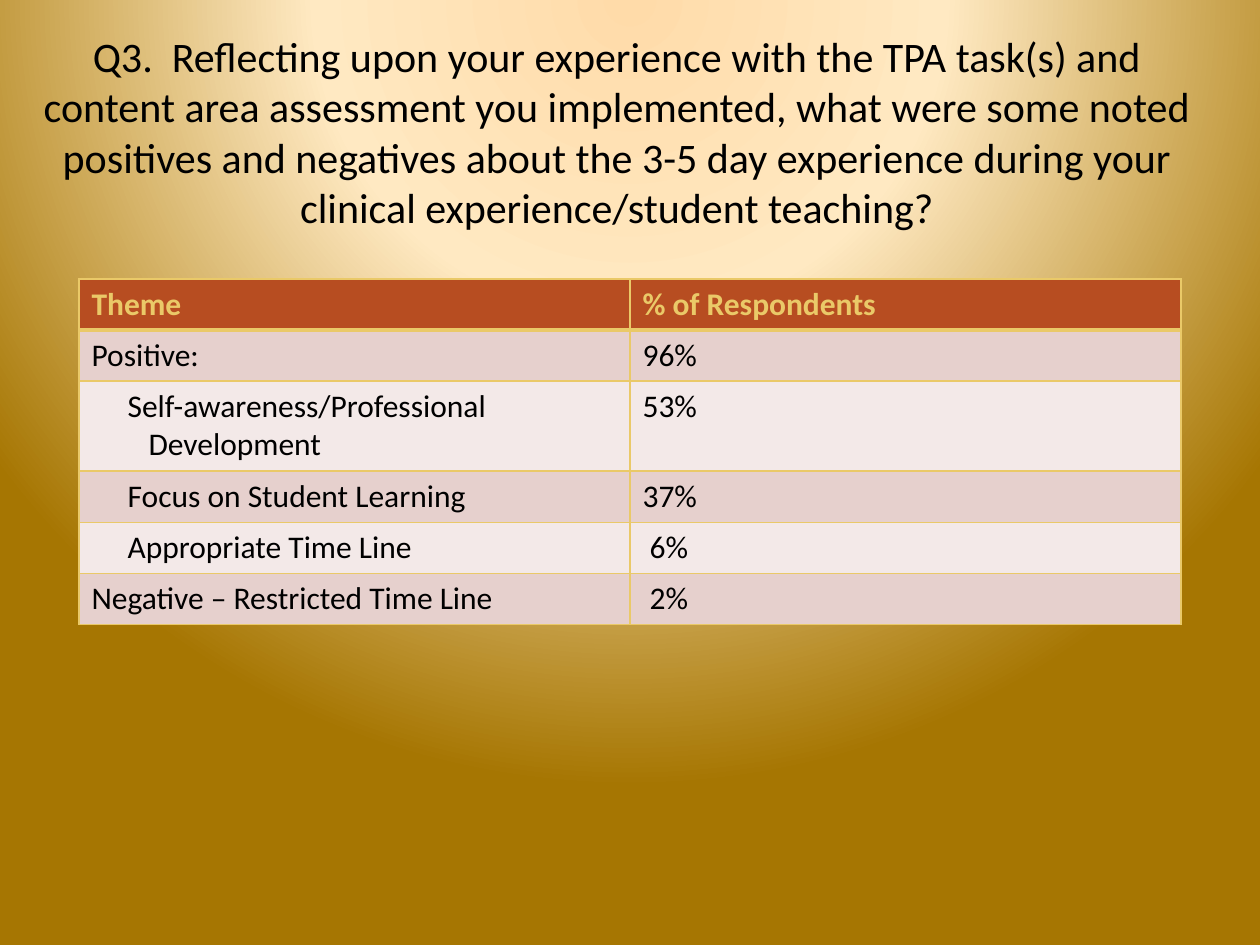
from pptx import Presentation
from pptx.dml.color import RGBColor
from pptx.enum.text import MSO_ANCHOR as Anchor, MSO_AUTO_SIZE as AutoSize, PP_ALIGN as Align
from pptx.oxml import parse_xml
from pptx.oxml.ns import nsdecls
from pptx.util import Emu, Pt

PX_PER_INCH = 126
FONT = "Calibri"

BLACK = RGBColor(0x00, 0x00, 0x00)
GOLD = RGBColor(0xEA, 0xC9, 0x68)
RUST = RGBColor(0xB7, 0x4D, 0x21)
ROSE = RGBColor(0xE6, 0xD0, 0xCD)
PALE_ROSE = RGBColor(0xF3, 0xE9, 0xE8)
PEACH = RGBColor(0xFF, 0xDB, 0xA9)
CREAM = RGBColor(0xFF, 0xE9, 0xC2)
BRONZE = RGBColor(0xA6, 0x76, 0x02)

GLOW_STOPS = [(0, PEACH), (40, CREAM), (100, BRONZE)]

QUESTION = (
    "Q3.  Reflecting upon your experience with the TPA task(s) and content area "
    "assessment you implemented, what were some noted positives and negatives about "
    "the 3-5 day experience during your clinical experience/student teaching?"
)

TITLE_FONT = {"name": FONT, "size": Pt(24), "bold": False}
HEADER_FONT = {"name": FONT, "size": Pt(18), "bold": True}
BODY_FONT = {**HEADER_FONT, "bold": False}

SUB_THEME, SUB_THEME_WRAP, ONE_DIGIT = 36, 57, 7

# Each cell is a list of (text, left indent in px) paragraphs.
RESPONSES = [
    ([("Theme", 0)], [("% of Respondents", 0)]),
    ([("Positive:", 0)], [("96%", 0)]),
    ([("Self-awareness/Professional", SUB_THEME), ("Development", SUB_THEME_WRAP)],
     [("53%", 0)]),
    ([("Focus on Student Learning", SUB_THEME)], [("37%", 0)]),
    ([("Appropriate Time Line", SUB_THEME)], [("6%", ONE_DIGIT)]),
    ([("Negative – Restricted Time Line", 0)], [("2%", ONE_DIGIT)]),
]
TABLE_LEFT, TABLE_TOP = 79, 279
COLUMN_WIDTH = 551
ROW_HEIGHT, EXTRA_LINE = 51, 39


def px(length):
    return Emu(round(length * 914400 / PX_PER_INCH))


def set_format(target, values):
    for name, value in values.items():
        setattr(target, name, value)


def paint_background(slide):
    """Circular glow centred above the top edge of the slide."""
    stops = "".join(
        f'<a:gs pos="{percent * 1000}"><a:srgbClr val="{color}"/></a:gs>'
        for percent, color in GLOW_STOPS
    )
    slide.element.cSld.insert(0, parse_xml(
        f'<p:bg {nsdecls("p", "a")}><p:bgPr><a:gradFill rotWithShape="1">'
        f'<a:gsLst>{stops}</a:gsLst><a:path path="circle">'
        '<a:fillToRect l="50000" t="-80000" r="50000" b="180000"/></a:path>'
        '</a:gradFill><a:effectLst/></p:bgPr></p:bg>'
    ))


def add_question(slide):
    title = slide.shapes.title
    set_format(title, {"left": px(28), "top": px(0), "width": px(1178), "height": px(262)})
    frame = title.text_frame
    frame.text = QUESTION
    set_format(frame, {"word_wrap": True, "auto_size": AutoSize.NONE,
                       "vertical_anchor": Anchor.MIDDLE})
    paragraph = frame.paragraphs[0]
    paragraph.alignment = Align.CENTER
    set_format(paragraph.font, TITLE_FONT)
    paragraph.font.color.rgb = BLACK


def draw_borders(cell, widths):
    """Widths in points, keyed by side in the order L, R, T, B."""
    properties = cell._tc.get_or_add_tcPr()
    for position, (side, width) in enumerate(widths.items()):
        properties.insert(position, parse_xml(
            f'<a:ln{side} {nsdecls("a")} w="{Pt(width)}"><a:solidFill>'
            f'<a:srgbClr val="{GOLD}"/></a:solidFill></a:ln{side}>'
        ))


def fill_cell(cell, lines, fill, font, color):
    cell.fill.solid()
    cell.fill.fore_color.rgb = fill
    frame = cell.text_frame
    for number, (text, indent) in enumerate(lines):
        paragraph = frame.add_paragraph() if number else frame.paragraphs[0]
        paragraph.text = text
        if indent:
            paragraph._p.get_or_add_pPr().set("marL", str(px(indent)))
        set_format(paragraph.font, font)
        paragraph.font.color.rgb = color


def add_responses(slide):
    heights = [ROW_HEIGHT + EXTRA_LINE * (len(theme) - 1) for theme, _ in RESPONSES]
    table = slide.shapes.add_table(
        len(RESPONSES), 2, px(TABLE_LEFT), px(TABLE_TOP),
        px(2 * COLUMN_WIDTH), px(sum(heights)),
    ).table
    for column in table.columns:
        column.width = px(COLUMN_WIDTH)
    for index, (row, height, contents) in enumerate(zip(table.rows, heights, RESPONSES)):
        row.height = px(height)
        if index == 0:
            style = (RUST, HEADER_FONT, GOLD)
        else:
            style = (ROSE if index % 2 else PALE_ROSE, BODY_FONT, BLACK)
        borders = {"L": 1, "R": 1, "T": 3 if index == 1 else 1, "B": 3 if index == 0 else 1}
        for cell, lines in zip(row.cells, contents):
            fill_cell(cell, lines, *style)
            draw_borders(cell, borders)


def main():
    deck = Presentation()
    set_format(deck, {"slide_width": px(1260), "slide_height": px(945)})
    slide = deck.slides.add_slide(deck.slide_layouts.get_by_name("Title Only"))
    paint_background(slide)
    add_question(slide)
    add_responses(slide)
    deck.save("out.pptx")


if __name__ == "__main__":
    main()
